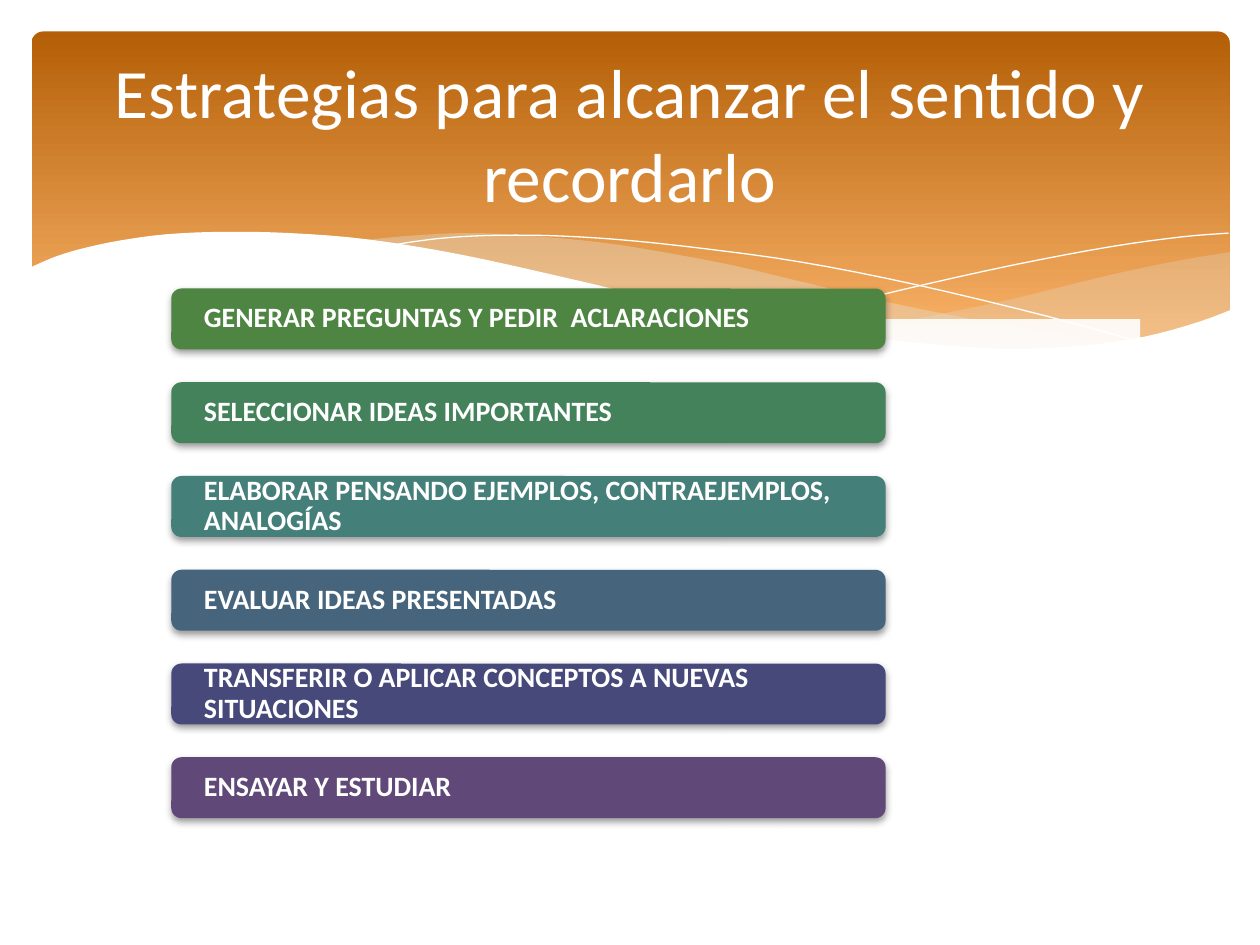
import pptx
import pptx.util
import pptx.dml.color
import pptx.enum.shapes
import pptx.enum.text
import pptx.oxml
import pptx.oxml.ns
from dataclasses import dataclass

Pt = pptx.util.Pt
Kind = pptx.enum.shapes.MSO_SHAPE
Align = pptx.enum.text.PP_ALIGN
Anchor = pptx.enum.text.MSO_ANCHOR
NS = pptx.oxml.ns.nsdecls("a")


@dataclass(frozen=True)
class Theme:
    font: str = "Calibri"
    head: float = 39.6
    body: float = 16
    white: str = "FFFFFF"
    sand: str = "E3DED1"
    dark: str = "B45F07"
    light: str = "F9B268"
    bars: tuple = ("4E8542", "43825A", "448079", "46657D", "47497B", "604878")


def rgb(code):
    return pptx.dml.color.RGBColor.from_string(code)


def smooth(knots, steps=4):
    """Points of a Catmull-Rom curve through the knots."""
    ends = [knots[0], *knots, knots[-1]]
    curve = [knots[0]]
    for a, b, c, d in zip(ends, ends[1:], ends[2:], ends[3:]):
        for n in range(1, steps + 1):
            t = n / steps
            curve.append(tuple(
                (2 * q + (r - p) * t + (2 * p - 5 * q + 4 * r - s) * t**2
                 + (3 * q - p - 3 * r + s) * t**3) / 2
                for p, q, r, s in zip(a, b, c, d)))
    return curve


class Deck:
    def __init__(self, theme):
        self.theme = theme
        self.file = pptx.Presentation()
        self.file.slide_width, self.file.slide_height = Pt(720), Pt(540)
        self.slide = self.file.slides.add_slide(self.file.slide_layouts[6])
        self.shapes = self.slide.shapes

    def paint(self, shape, color, alpha=100):
        shape.shadow.inherit = False
        shape.line.fill.background()
        shape.fill.solid()
        shape.fill.fore_color.rgb = rgb(color)
        if alpha < 100:
            fill = shape._element.spPr.find(pptx.oxml.ns.qn("a:solidFill"))
            fill[0].append(pptx.oxml.parse_xml(
                f'<a:alpha {NS} val="{alpha * 1000}"/>'))

    def block(self, kind, box, color, alpha=100):
        shape = self.shapes.add_shape(kind, *map(Pt, box))
        self.paint(shape, color, alpha)
        return shape

    def panel(self, box, top, base):
        shape = self.block(Kind.ROUNDED_RECTANGLE, box, top)
        shape.adjustments[0] = 0.034
        shape.fill.gradient()
        shape.fill.gradient_angle = 270
        for stop, place, color in zip(shape.fill.gradient_stops, (0, 0.9), (top, base)):
            stop.position = place
            stop.color.rgb = rgb(color)

    def outline(self, points, close):
        first, *rest = [(Pt(x), Pt(y)) for x, y in points]
        pen = self.shapes.build_freeform(*first)
        pen.add_line_segments(rest, close=close)
        return pen.convert_to_shape()

    def wave(self, edges, color, alpha=100):
        points = [point for edge in edges for point in smooth(edge)]
        self.paint(self.outline(points, True), color, alpha)

    def curve(self, knots, color):
        shape = self.outline(smooth(knots), False)
        shape.shadow.inherit = False
        shape.fill.background()
        shape.line.color.rgb = rgb(color)
        shape.line.width = Pt(0)

    def label(self, shape, text, size, align, bold=False):
        frame = shape.text_frame
        frame.word_wrap = True
        frame.vertical_anchor = Anchor.MIDDLE
        par = frame.paragraphs[0]
        par.text = text
        par.alignment = align
        par.font.name = self.theme.font
        par.font.size = Pt(size)
        par.font.bold = bold
        par.font.color.rgb = rgb(self.theme.white)
        return frame

    def title(self, box, text):
        shape = self.shapes.add_textbox(*map(Pt, box))
        self.label(shape, text, self.theme.head, Align.CENTER)

    def bar(self, box, text, color):
        shape = self.block(Kind.ROUNDED_RECTANGLE, box, color)
        shape._element.spPr.find(pptx.oxml.ns.qn("a:effectLst")).append(
            pptx.oxml.parse_xml(
                f'<a:outerShdw {NS} blurRad="{Pt(4)}" dist="{Pt(2)}" dir="5400000"'
                ' rotWithShape="0"><a:srgbClr val="000000"><a:alpha val="38000"/>'
                '</a:srgbClr></a:outerShdw>'))
        frame = self.label(shape, text, self.theme.body, Align.LEFT, True)
        frame.margin_left = frame.margin_right = Pt(17)
        frame.margin_top = frame.margin_bottom = 0
        frame.paragraphs[0].line_spacing = 0.9


def main():
    theme = Theme()
    deck = Deck(theme)

    # Orange header
    deck.panel((18, 18, 684.7, 194.4), theme.dark, theme.light)

    # Translucent waves, each an upper and a lower edge
    deck.wave([
        [(703, 144), (673, 149), (641.5, 155.5), (620, 160.6), (579.6, 170.6),
         (542, 178.6), (508, 185), (476, 190.8)],
        [(476, 190.8), (497.5, 193.7), (527, 197.3), (554, 199.4), (578, 200.2),
         (601, 199.4), (621, 198), (640, 195.8), (657, 192.2), (673, 188.6),
         (693, 181.4), (703, 177.8)],
    ], theme.sand, 29)
    deck.wave([
        [(643, 196.6), (602.6, 190.8), (558, 182.9), (508, 172.8), (453, 159.8),
         (420.5, 152), (389.5, 146), (352, 139.7), (318, 136), (273.6, 133.2),
         (236, 134.6), (206, 137.5)],
        [(206, 137.5), (246, 143.3), (291, 151.9), (323, 159.8), (381.6, 172.8),
         (432.7, 183.6), (478.8, 191.5), (520, 197.3), (556.6, 199.4),
         (589, 200.2), (617, 199.4), (643, 196.6)],
    ], theme.sand, 40)

    # Fine white curves
    deck.curve([(222.5, 140.4), (236, 138.2), (254, 136), (278.6, 134.6),
                (311.8, 134.6), (352, 136.8), (400, 141.8), (458, 149.8),
                (523.4, 162.7), (598.3, 180.7), (653, 195.8)], theme.white)
    deck.curve([(441.4, 185), (470, 177.1), (518.4, 164.9), (580.3, 151.2),
                (634, 141.1), (675, 135.4), (702, 133.2)], theme.white)

    # White wave that cuts the header's lower edge
    deck.wave([
        [(703.4, 177.1), (684, 184.3), (655, 192.2), (621.4, 197.3),
         (582.5, 199.4), (548, 198), (509.8, 194.4), (466.6, 188.6), (417, 180),
         (362, 167.8), (321.8, 158.4), (262.8, 145.4), (210, 136.8),
         (165.6, 133.2), (127.4, 132.5), (95, 133.9), (68.4, 137.5),
         (48, 141.8), (33, 146.2), (21, 151.2), (16.6, 153.4)],
        [(16.6, 236.9), (703.4, 236.9)],
    ], theme.white)

    # Strategy bars, each over a pale track
    items = (
        "GENERAR PREGUNTAS Y PEDIR  ACLARACIONES",
        "SELECCIONAR IDEAS IMPORTANTES",
        "ELABORAR PENSANDO EJEMPLOS, CONTRAEJEMPLOS, ANALOGÍAS",
        "EVALUAR IDEAS PRESENTADAS",
        "TRANSFERIR O APLICAR CONCEPTOS A NUEVAS SITUACIONES",
        "ENSAYAR Y ESTUDIAR",
    )
    top, pitch = 164.9, 53.57
    for n, (text, color) in enumerate(zip(items, theme.bars)):
        y = top + n * pitch
        deck.block(Kind.RECTANGLE, (68.4, y + 17.4, 583.2, 29.5), theme.white, 90)
        deck.bar((97.9, y, 408.2, 34.8), text, color)

    # Title
    deck.title((36, 26.6, 648, 98.6),
               "Estrategias para alcanzar el sentido y recordarlo")

    deck.file.save("out.pptx")


if __name__ == "__main__":
    main()
